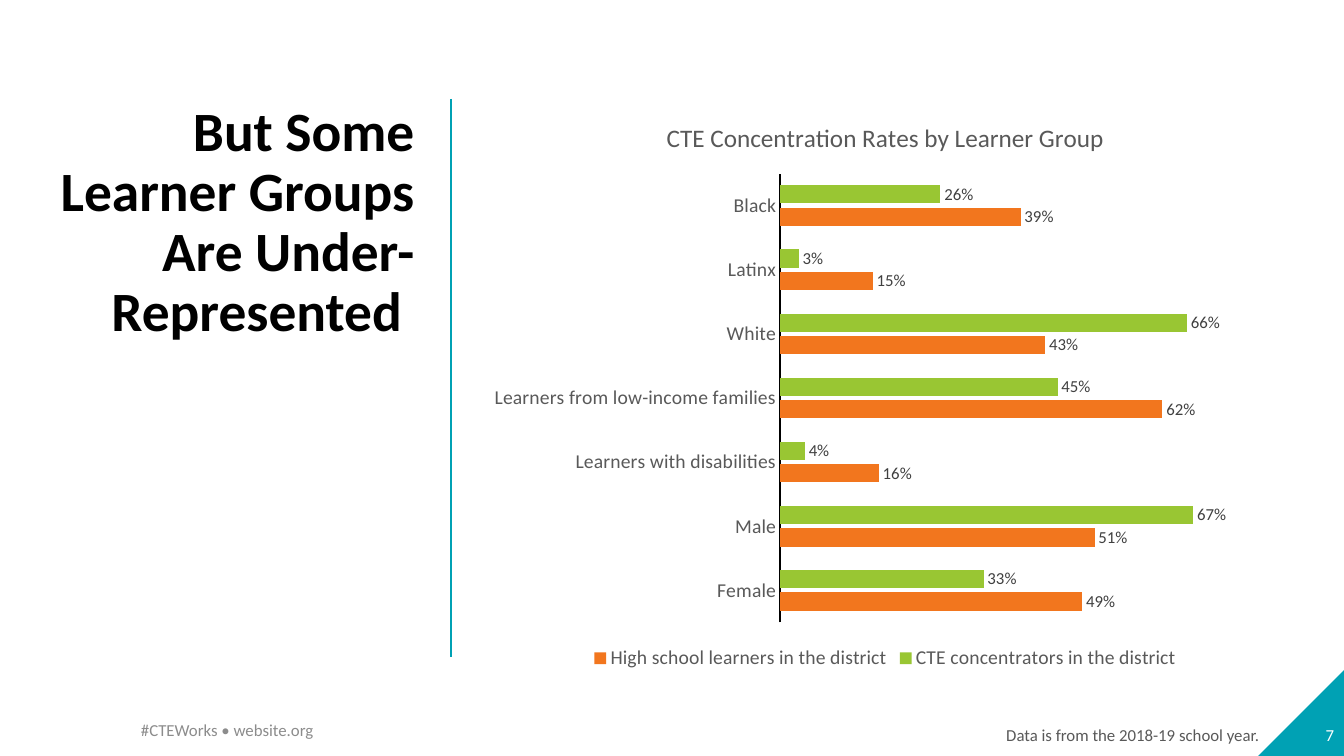
from lxml import etree
from pptx import Presentation
from pptx import util as u
from pptx.chart import data
from pptx.dml.color import RGBColor
from pptx.enum import chart as ch
from pptx.enum import shapes, text
from pptx.oxml import parse_xml
from pptx.oxml.ns import nsdecls, qn

TEAL, GREY = "00A1B4", "595959"
RIGHT = text.PP_ALIGN.RIGHT
TOP, MID = text.MSO_ANCHOR.TOP, text.MSO_ANCHOR.MIDDLE


def color(code):
    return RGBColor.from_string(code)


class Deck:
    def __init__(self, face):
        self.face = face
        self.prs = Presentation()
        self.prs.slide_width = u.Inches(13.33)
        self.prs.slide_height = u.Inches(7.5)
        self.slide = self.prs.slides.add_slide(self.prs.slide_layouts[6])

    def style(self, font, size, code, bold=False):
        font.name, font.size, font.bold = self.face, u.Pt(size), bold
        font.color.rgb = color(code)

    def corner(self, box, fill):
        tri = self.slide.shapes.add_shape(
            shapes.MSO_SHAPE.RIGHT_TRIANGLE, *map(u.Inches, box))
        tri.shadow.inherit = False
        tri.fill.solid()
        tri.fill.fore_color.rgb = color(fill)
        tri.line.fill.background()
        tri.element.spPr.find(qn("a:xfrm")).set("flipH", "1")

    def line(self, start, end, code, width):
        rule = self.slide.shapes.add_connector(
            shapes.MSO_CONNECTOR.STRAIGHT, *map(u.Inches, start + end))
        rule.line.color.rgb = color(code)
        rule.line.width = u.Pt(width)
        etree.SubElement(rule.element.spPr, qn("a:effectLst"))

    def text(self, box, words, size, code, align=None, anchor=MID,
             bold=False, space=None):
        frame = self.slide.shapes.add_textbox(*map(u.Inches, box)).text_frame
        frame.word_wrap = True
        frame.vertical_anchor = anchor
        para = frame.paragraphs[0]
        para.text, para.alignment = words, align
        para.line_spacing = space
        self.style(para.font, size, code, bold)

    def bars(self, box, title, cats, series, plot_box):
        info = data.CategoryChartData(number_format="0%")
        info.categories = cats
        for name, vals, _ in series:
            info.add_series(name, vals)
        chart = self.slide.shapes.add_chart(
            ch.XL_CHART_TYPE.BAR_CLUSTERED, *map(u.Inches, box), info).chart
        self.style(chart.font, 10, "000000")

        # Title and legend
        chart.has_title = True
        head = chart.chart_title.text_frame.paragraphs[0]
        head.text = title
        self.style(head.font, 18, GREY)
        chart.has_legend = True
        chart.legend.position = ch.XL_LEGEND_POSITION.BOTTOM
        chart.legend.include_in_layout = False
        self.style(chart.legend.font, 14, GREY)

        # Axes
        axis = chart.category_axis
        axis.reverse_order = True
        axis.major_tick_mark = ch.XL_TICK_MARK.NONE
        axis.format.line.color.rgb = color("000000")
        axis.format.line.width = u.Pt(1)
        self.style(axis.tick_labels.font, 14, GREY)
        scale = chart.value_axis
        scale.visible = scale.has_major_gridlines = False
        scale.minimum_scale, scale.maximum_scale = 0, 0.8

        # Bars and their labels
        plot = chart.plots[0]
        plot.gap_width, plot.overlap = 129, -24
        plot.vary_by_categories = False
        for bar, (_, _, fill) in zip(plot.series, series):
            bar.format.fill.solid()
            bar.format.fill.fore_color.rgb = color(fill)
            tags = bar.data_labels
            tags.show_value = True
            tags.position = ch.XL_LABEL_POSITION.OUTSIDE_END
            tags.number_format, tags.number_format_is_linked = "0%", False
            self.style(tags.font, 12, "404040")

        # Plot area as shares of the chart frame
        area = chart.element.find(".//" + qn("c:plotArea"))
        for old in area.findall(qn("c:layout")):
            area.remove(old)
        sizes = "".join(f'<c:{tag} val="{val}"/>'
                        for tag, val in zip("xywh", plot_box))
        area.insert(0, parse_xml(
            f'<c:layout {nsdecls("c")}><c:manualLayout>'
            '<c:layoutTarget val="inner"/><c:xMode val="edge"/>'
            f'<c:yMode val="edge"/>{sizes}</c:manualLayout></c:layout>'))


def main():
    deck = Deck("Calibri")

    # Corner and heading
    deck.corner((12.48, 6.63, 0.87, 0.87), TEAL)
    deck.text((0.14, 0.98, 4.07, 2.05),
              "But Some Learner Groups Are Under-Represented ",
              39.6, "000000", RIGHT, TOP, bold=True, space=0.9)

    # Rates chart
    deck.bars(
        (4.77, 0.98, 8.02, 5.71), "CTE Concentration Rates by Learner Group",
        ["Black", "Latinx", "White", "Learners from low-income families",
         "Learners with disabilities", "Male", "Female"],
        [("CTE concentrators in the district",
          (0.26, 0.03, 0.66, 0.45, 0.04, 0.67, 0.33), "99C633"),
         ("High school learners in the district",
          (0.39, 0.15, 0.43, 0.62, 0.16, 0.51, 0.49), "F2761E")],
        (0.37, 0.13, 0.61, 0.78))
    deck.line((4.47, 0.98), (4.47, 6.52), TEAL, 1.5)

    # Footer
    deck.text((10.33, 7.09, 3, 0.4), "7", 12, "FFFFFF", RIGHT)
    deck.text((1.3, 7.04, 4.5, 0.4), "#CTEWorks • website.org", 12, "8C8C8C")
    deck.text((8.09, 7.14, 4.5, 0.3), "Data is from the 2018-19 school year.",
              12, GREY, RIGHT, TOP)

    deck.prs.save("out.pptx")


if __name__ == "__main__":
    main()
